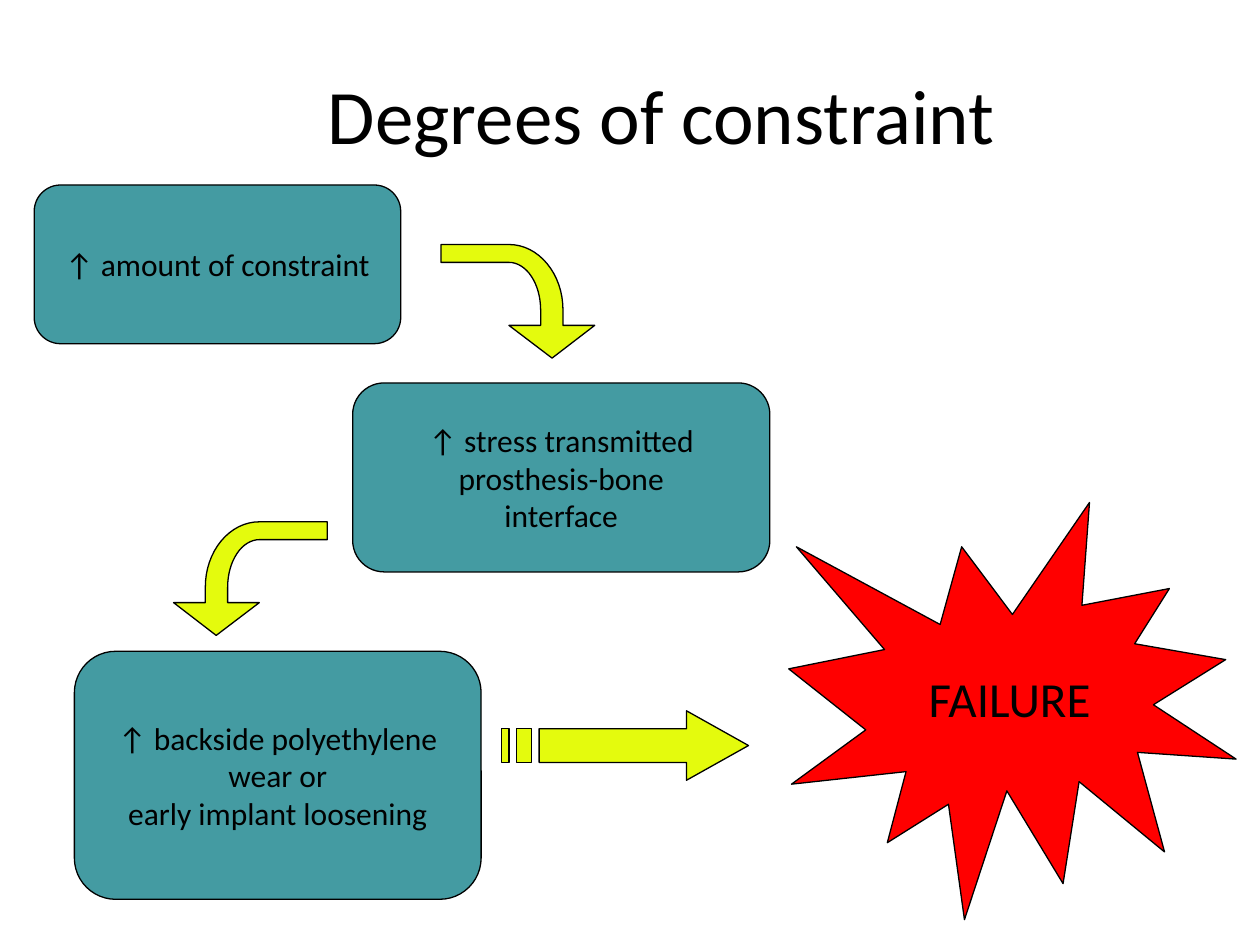
"""Build the slide that shows how constraint leads to implant failure."""
from math import cos, pi, sin

from pptx import Presentation
from pptx.dml.color import RGBColor
from pptx.enum.shapes import MSO_SHAPE
from pptx.enum.text import MSO_ANCHOR, PP_ALIGN
from pptx.util import Cm, Pt

BOX, BURST = MSO_SHAPE.FLOWCHART_ALTERNATE_PROCESS, MSO_SHAPE.EXPLOSION1
MIDDLE, CENTER = MSO_ANCHOR.MIDDLE, PP_ALIGN.CENTER
TEAL, RED, YELLOW, BLACK = "449BA2", "FF0000", "E4FB0D", "000000"
ARC_STEPS = 16


def style_shape(shape, fill):
    shape.shadow.inherit = False
    shape.fill.solid()
    shape.fill.fore_color.rgb = RGBColor.from_string(fill)
    shape.line.color.rgb = RGBColor.from_string(BLACK)
    shape.line.width = Pt(0.75)


def write_text(shape, text, size, wrap):
    frame = shape.text_frame
    frame.text = text
    for name, value in {"word_wrap": wrap, "vertical_anchor": MIDDLE}.items():
        setattr(frame, name, value)
    for paragraph in frame.paragraphs:
        paragraph.alignment = CENTER
        for name, value in {"name": "Calibri", "size": Pt(size)}.items():
            setattr(paragraph.font, name, value)
        paragraph.font.color.rgb = RGBColor.from_string(BLACK)


presentation = Presentation()
presentation.slide_width, presentation.slide_height = Cm(25.4), Cm(19.05)
slide = presentation.slides.add_slide(presentation.slide_layouts[6])

title = slide.shapes.add_textbox(Cm(1.91), Cm(0.71), Cm(22.86), Cm(3.18))
write_text(title, "Degrees of constraint", 44, True)

steps = [
    (BOX, TEAL, 18, (0.69, 3.73, 7.39, 3.2), "↑ amount of constraint"),
    (BOX, TEAL, 18, (7.11, 7.72, 8.41, 3.81),
     "↑ stress transmitted\nprosthesis-bone\ninterface"),
    (BOX, TEAL, 18, (1.5, 13.13, 8.2, 5),
     "↑ backside polyethylene\nwear or\nearly implant loosening"),
    (BURST, RED, 28, (15.9, 10.13, 9.02, 8.41), "FAILURE"),
]
for preset, fill, size, position, text in steps:
    shape = slide.shapes.add_shape(preset, *map(Cm, position))
    style_shape(shape, fill)
    write_text(shape, text, size, False)

angles = [pi / 2 * step / ARC_STEPS for step in range(ARC_STEPS + 1)]
outer_arc = [(1.37 + 1.09 * sin(angle), 1.32 - 1.32 * cos(angle)) for angle in angles]
inner_arc = [(1.37 + 0.64 * sin(angle), 1.32 - 0.96 * cos(angle)) for angle in angles]
arrow_head = [(2.46, 1.63), (3.1, 1.63), (2.24, 2.29), (1.37, 1.63), (2.01, 1.63)]
bent_arrow = [(0, 0), *outer_arc, *arrow_head, *reversed(inner_arc), (0, 0.36)]

striped_arrow = [
    [(0.76, 0.36), (3.73, 0.36), (3.73, 0), (4.98, 0.7),
     (3.73, 1.4), (3.73, 1.04), (0.76, 1.04)],
    *([(left, 0.36), (right, 0.36), (right, 1.04), (left, 1.04)]
      for left, right in [(0.3, 0.61), (0, 0.15)]),
]

arrows = [
    (8.89, 4.93, 1, [bent_arrow]),
    (6.6, 10.52, -1, [bent_arrow]),
    (10.11, 14.33, 1, striped_arrow),
]
for left, top, direction, outlines in arrows:
    contours = [[(Cm(left + direction * x), Cm(top + y)) for x, y in outline]
                for outline in outlines]
    builder = slide.shapes.build_freeform(*contours[0][0])
    builder.add_line_segments(contours[0][1:], close=True)
    for contour in contours[1:]:
        builder.move_to(*contour[0])
        builder.add_line_segments(contour[1:], close=True)
    style_shape(builder.convert_to_shape(), YELLOW)

presentation.save("out.pptx")
